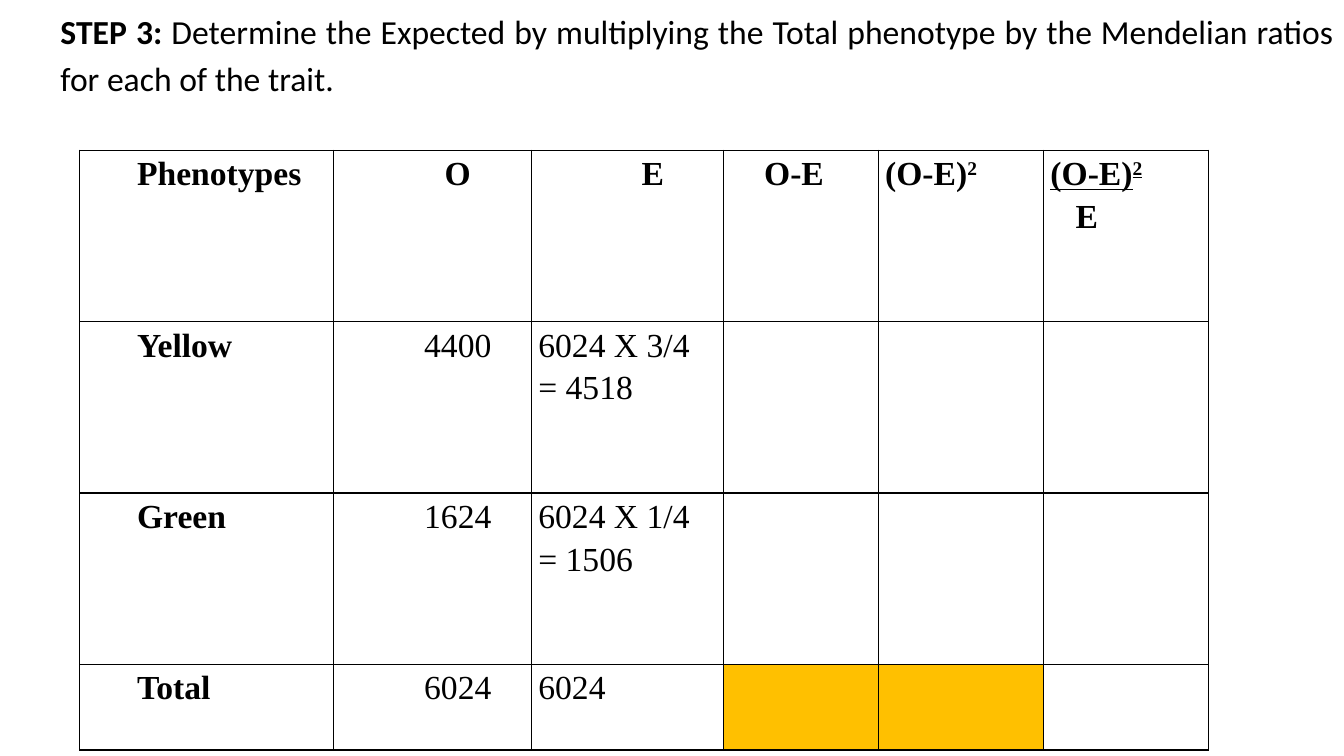
from lxml import etree
from pptx import Presentation
from pptx import util as u
from pptx.dml.color import RGBColor
from pptx.enum import text
from pptx.oxml import ns

PX = 9144  # 100 px to the inch
BLACK = RGBColor(0x00, 0x00, 0x00)
AMBER = RGBColor(0xFF, 0xC0, 0x00)
LEFT, CENTER, JUSTIFY = text.PP_ALIGN.LEFT, text.PP_ALIGN.CENTER, text.PP_ALIGN.JUSTIFY

COLUMN_WIDTHS = [252, 196, 191, 153, 164, 164]
ROW_HEIGHTS = [170, 170, 170, 85]
INDENT = 50

# Each span is (words, style): b bold, u underlined, s superscript
STEP = [("STEP 3: ", "b"),
        ("Determine the Expected by multiplying the Total phenotype "
         "by the Mendelian ratios for each of the trait.", "")]

# Each paragraph is (indent, alignment, spans)
HEADER = [
    [(INDENT, LEFT, [("Phenotypes", "b")])],
    [(INDENT, CENTER, [("O", "b")])],
    [(INDENT, CENTER, [("E", "b")])],
    [(33, LEFT, [("O-E", "b")])],
    [(0, LEFT, [("(O-E)", "b"), ("2", "bs")])],
    [(0, LEFT, [("(O-E)", "bu"), ("2", "bus")]), (25, LEFT, [("E", "b")])],
]
COUNTS = [
    ("Yellow", "4400", ["6024 X 3/4", "= 4518"]),
    ("Green", "1624", ["6024 X 1/4", "= 1506"]),
    ("Total", "6024", ["6024"]),
]
SHADED = {(3, 3), (3, 4)}


def px(length):
    return u.Emu(length * PX)


def write_para(para, font_name, indent, align, spans):
    para.alignment = align
    para.line_spacing = 1.15
    props = para._p.get_or_add_pPr()
    props.set("marL", str(px(indent)))
    props.set("indent", "0")
    for words, style in spans:
        span = para.add_run()
        span.text = words
        font = span.font
        font.name, font.size = font_name, u.Pt(24)
        font.color.rgb = BLACK
        font.bold = "b" in style
        font.underline = "u" in style
        if "s" in style:
            span._r.get_or_add_rPr().set("baseline", "30000")


def add_step(page, left, top, width, height):
    box = page.shapes.title
    box.left, box.top, box.width, box.height = map(px, (left, top, width, height))
    frame = box.text_frame
    frame.word_wrap = True
    frame.auto_size = text.MSO_AUTO_SIZE.NONE
    frame.vertical_anchor = text.MSO_ANCHOR.TOP
    write_para(frame.paragraphs[0], "Calibri", INDENT, JUSTIFY, STEP)


def draw_borders(cell):
    props = cell._tc.get_or_add_tcPr()
    for side in ("lnL", "lnR", "lnT", "lnB"):
        line = etree.SubElement(props, ns.qn("a:" + side), w=str(u.Pt(1)))
        fill = etree.SubElement(line, ns.qn("a:solidFill"))
        etree.SubElement(fill, ns.qn("a:srgbClr"), val=str(BLACK))


def fill_cell(cell, paras, shaded):
    cell.margin_left = cell.margin_right = px(7)
    cell.margin_top = cell.margin_bottom = 0
    draw_borders(cell)
    if shaded:
        cell.fill.solid()
        cell.fill.fore_color.rgb = AMBER
    else:
        cell.fill.background()
    frame = cell.text_frame
    for number, (indent, align, spans) in enumerate(paras):
        para = frame.add_paragraph() if number else frame.paragraphs[0]
        write_para(para, "Times New Roman", indent, align, spans)


def count_row(label, observed, expected):
    return [
        [(INDENT, LEFT, [(label, "b")])],
        [(INDENT, CENTER, [(observed, "")])],
        [(0, LEFT, [(line, "")]) for line in expected],
        [], [], [],
    ]


def add_counts_table(page, left, top):
    rows = [HEADER] + [count_row(*counts) for counts in COUNTS]
    table = page.shapes.add_table(
        len(ROW_HEIGHTS), len(COLUMN_WIDTHS), px(left), px(top),
        px(sum(COLUMN_WIDTHS)), px(sum(ROW_HEIGHTS))).table
    table.first_row = table.horz_banding = False
    for column, width in zip(table.columns, COLUMN_WIDTHS):
        column.width = px(width)
    for row, height in zip(table.rows, ROW_HEIGHTS):
        row.height = px(height)
    for r, cells in enumerate(rows):
        for c, paras in enumerate(cells):
            fill_cell(table.cell(r, c), paras, (r, c) in SHADED)


def main():
    deck = Presentation()
    deck.slide_width, deck.slide_height = px(1333), px(750)
    page = deck.slides.add_slide(deck.slide_layouts[5])
    add_step(page, 0, 0, 1333, 218)
    add_counts_table(page, 79, 149)
    deck.save("out.pptx")


if __name__ == "__main__":
    main()
